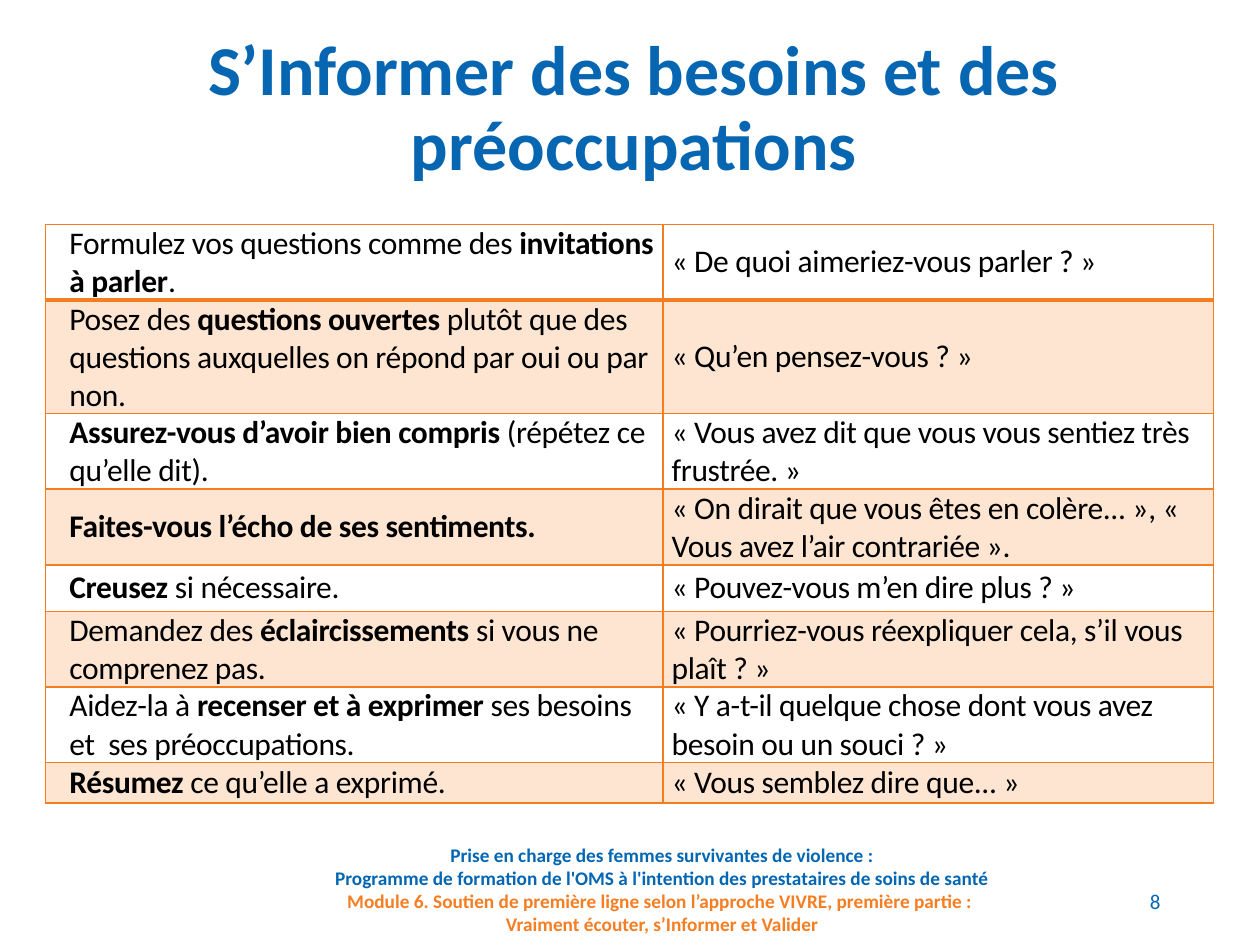
from dataclasses import dataclass
from typing import Any

import lxml.etree
import pptx
import pptx.dml.color
import pptx.enum.text
import pptx.oxml.ns
import pptx.util

Pt = pptx.util.Pt
qn = pptx.oxml.ns.qn
Align = pptx.enum.text.PP_ALIGN
Anchor = pptx.enum.text.MSO_ANCHOR


@dataclass(frozen=True)
class Theme:
    font: str = "Calibri"
    title_blue: str = "0666B2"
    footer_blue: str = "0366B3"
    footer_orange: str = "F57D22"
    table_orange: str = "F57D21"
    black: str = "000000"
    white: str = "FFFFFF"
    title_size: float = 40
    body_size: float = 18
    footer_size: float = 11
    number_size: float = 12


@dataclass(frozen=True)
class Advice:
    """A technique and its example; ** marks bold text."""
    technique: str
    example: str
    height: float


@dataclass(frozen=True)
class Box:
    left: float
    top: float
    width: float
    height: float


THEME = Theme()
COLUMN_WIDTHS = (352.8, 314.64)
TABLE_BOX = Box(26, 128.2, sum(COLUMN_WIDTHS), 330.5)
ADVICE = (
    Advice("Formulez vos questions comme des **invitations à parler**.",
           "« De quoi aimeriez-vous parler ? »", 34.6),
    Advice("Posez des** questions ouvertes** plutôt que des questions "
           "auxquelles on répond par oui ou par non.",
           "« Qu’en pensez-vous ? »", 36.7),
    Advice("**Assurez-vous d’avoir bien compris **(répétez ce qu’elle dit).",
           "« Vous avez dit que vous vous sentiez très frustrée. »", 37.4),
    Advice("**Faites-vous l’écho de ses sentiments.**",
           "« On dirait que vous êtes en colère... », "
           "« Vous avez l’air contrariée ».", 38.9),
    Advice("**Creusez** si nécessaire.",
           "« Pouvez-vous m’en dire plus ? »", 26.6),
    Advice("Demandez des **éclaircissements** si vous ne comprenez pas.",
           "« Pourriez-vous réexpliquer cela, s’il vous plaît ? »", 37.4),
    Advice("Aidez-la à **recenser et à exprimer** ses besoins et  ses préoccupations.",
           "« Y a-t-il quelque chose dont vous avez besoin ou un souci ? »", 40.3),
    Advice("**Résumez** ce qu’elle a exprimé.",
           "« Vous semblez dire que... »", 23),
)


def write(paragraph: Any, text: str, *, size: float, color: str, bold: bool = False,
          align: Any = None, line_spacing: float | None = None,
          tracking: float = 0, indent: float = 0) -> None:
    """Append text; ** toggles bold and a newline breaks the line."""
    if indent:
        properties = paragraph._p.get_or_add_pPr()
        properties.set("marL", str(Pt(indent)))
        properties.set("indent", "0")
    if align is not None:
        paragraph.alignment = align
    if line_spacing is not None:
        paragraph.line_spacing = line_spacing
    for part_index, part in enumerate(text.split("**")):
        for line_index, line in enumerate(part.split("\n")):
            if line_index:
                paragraph.add_line_break()
            if not line:
                continue
            run = paragraph.add_run()
            run.text = line
            run.font.name = THEME.font
            run.font.size = Pt(size)
            run.font.bold = bold or part_index % 2 == 1
            run.font.color.rgb = pptx.dml.color.RGBColor.from_string(color)
            if tracking:
                run._r.get_or_add_rPr().set("spc", str(round(tracking * 100)))


def add_text_frame(slide: Any, box: Box, anchor: Any = Anchor.MIDDLE) -> Any:
    frame = slide.shapes.add_textbox(
        Pt(box.left), Pt(box.top), Pt(box.width), Pt(box.height)).text_frame
    frame.word_wrap = True
    frame.vertical_anchor = anchor
    return frame


def set_borders(cell: Any, top: float, bottom: float) -> None:
    properties = cell._tc.get_or_add_tcPr()
    for side, width in (("L", 1), ("R", 1), ("T", top), ("B", bottom)):
        line = lxml.etree.SubElement(properties, qn(f"a:ln{side}"), w=str(Pt(width)))
        fill = lxml.etree.SubElement(line, qn("a:solidFill"))
        lxml.etree.SubElement(fill, qn("a:srgbClr"), val=THEME.table_orange)


def fill_cell(cell: Any, row_index: int) -> None:
    """Tint every second row; the first row stays clear."""
    if row_index == 0:
        cell.fill.background()
        return
    tinted = row_index % 2 == 1
    cell.fill.solid()
    cell.fill.fore_color.rgb = pptx.dml.color.RGBColor.from_string(
        THEME.table_orange if tinted else THEME.white)
    if tinted:
        color = cell._tc.tcPr.find(qn("a:solidFill")).find(qn("a:srgbClr"))
        lxml.etree.SubElement(color, qn("a:alpha"), val="20000")


def add_advice_table(slide: Any) -> None:
    table = slide.shapes.add_table(
        len(ADVICE), len(COLUMN_WIDTHS), Pt(TABLE_BOX.left), Pt(TABLE_BOX.top),
        Pt(TABLE_BOX.width), Pt(TABLE_BOX.height)).table
    table.first_row = False
    table.horz_banding = False
    for column, width in zip(table.columns, COLUMN_WIDTHS):
        column.width = Pt(width)
    for row_index, advice in enumerate(ADVICE):
        table.rows[row_index].height = Pt(advice.height)
        for column_index, text in enumerate((advice.technique, advice.example)):
            cell = table.cell(row_index, column_index)
            cell.margin_left = cell.margin_right = Pt(5.04)
            cell.margin_top = cell.margin_bottom = 0
            cell.vertical_anchor = Anchor.MIDDLE
            set_borders(cell, top=2 if row_index == 1 else 1,
                        bottom=2 if row_index == 0 else 1)
            fill_cell(cell, row_index)
            write(cell.text_frame.paragraphs[0], text, size=THEME.body_size,
                  color=THEME.black, tracking=-0.2,
                  indent=8.64 if column_index == 0 else 0)


def add_footer(slide: Any) -> None:
    footer = add_text_frame(slide, Box(125.3, 478.1, 506.2, 47.5), Anchor.TOP)
    programme = footer.paragraphs[0]
    details = footer.add_paragraph()
    for paragraph, text, color in (
        (programme, "Prise en charge des femmes survivantes de violence :",
         THEME.footer_blue),
        (details, "Programme de formation de l'OMS à l'intention des "
         "prestataires de soins de santé\n", THEME.footer_blue),
        (details, "Module 6. Soutien de première ligne selon l’approche VIVRE, "
         "première partie : \nVraiment écouter, s’Informer et Valider",
         THEME.footer_orange),
    ):
        write(paragraph, text, size=THEME.footer_size, color=color, bold=True,
              align=Align.CENTER)


def main() -> None:
    presentation = pptx.Presentation()
    presentation.slide_width = Pt(720)
    presentation.slide_height = Pt(540)
    slide = presentation.slides.add_slide(presentation.slide_layouts[6])

    add_footer(slide)
    title = add_text_frame(slide, Box(0, 10.8, 724.3, 104.4))
    write(title.paragraphs[0], "S’Informer des besoins et des préoccupations",
          size=THEME.title_size, color=THEME.title_blue, bold=True,
          align=Align.CENTER, line_spacing=0.9)
    number = add_text_frame(slide, Box(631.4, 500.4, 38.9, 28.8))
    write(number.paragraphs[0], "8", size=THEME.number_size,
          color=THEME.footer_blue, align=Align.RIGHT)
    add_advice_table(slide)

    presentation.save("out.pptx")


if __name__ == "__main__":
    main()
